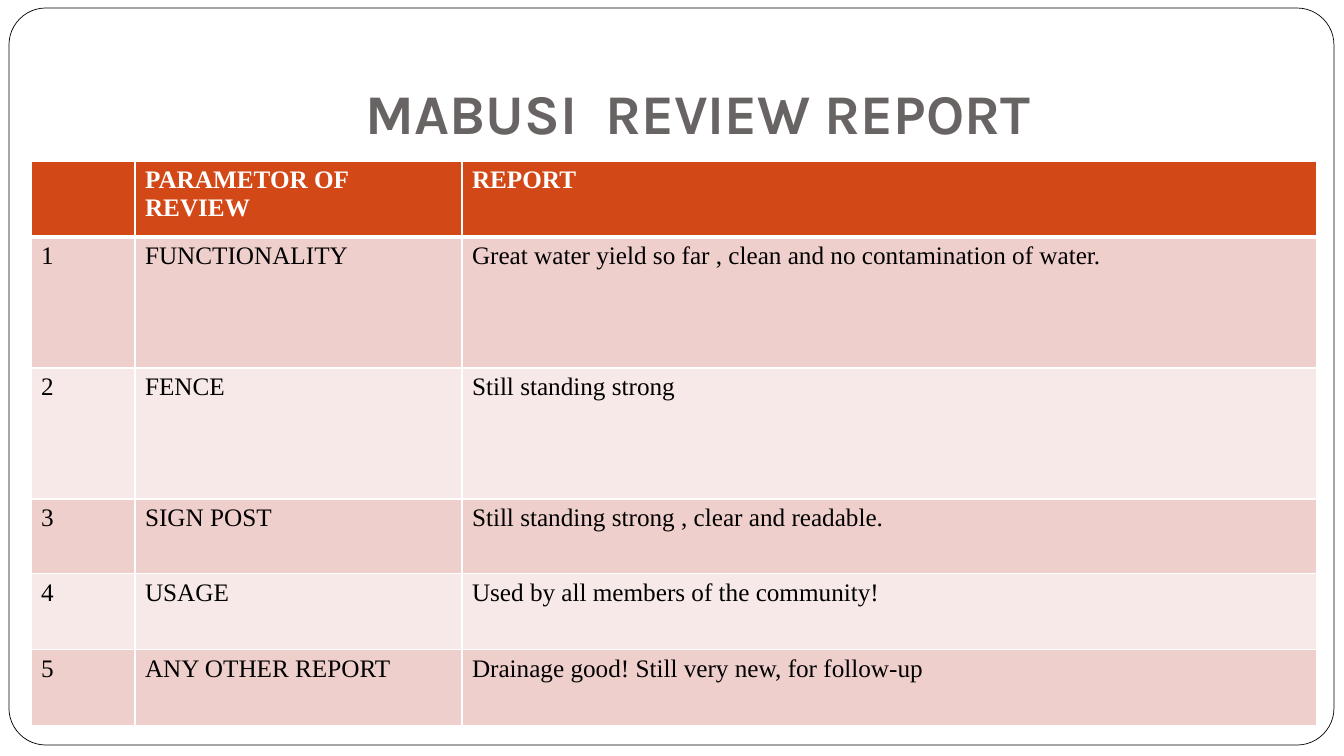
from lxml.etree import SubElement
from pptx import Presentation
from pptx.dml.color import RGBColor
from pptx.enum.shapes import MSO_SHAPE as Shape
from pptx.enum.text import MSO_ANCHOR as Anchor, MSO_AUTO_SIZE as AutoSize, PP_ALIGN as Align
from pptx.oxml.ns import qn
from pptx.util import Emu, Pt

COLOURS = {
    "white": "FFFFFF",
    "black": "000000",
    "title": "696464",
    "header": "D34817",
    "odd": "EFCFCC",
    "even": "F7E9E8",
}
COLUMN_WIDTHS = [104, 327, 855]
ROW_HEIGHTS = [76, 131, 131, 75, 76, 76]
REVIEW = [
    ("", "PARAMETOR OF REVIEW", "REPORT"),
    ("1", "FUNCTIONALITY", "Great water yield so far , clean and no contamination of water."),
    ("2", "FENCE", "Still standing strong"),
    ("3", "SIGN POST", "Still standing strong , clear and readable."),
    ("4", "USAGE", "Used by all members of the community!"),
    ("5", "ANY OTHER REPORT", "Drainage good! Still very new, for follow-up"),
]


def px(length):
    return Emu(round(length * 914400 / 100.8))


def colour(name):
    return RGBColor.from_string(COLOURS[name])


class ReportSlide:
    title_font = "Karla"
    body_font = "Times New Roman"

    def __init__(self, presentation):
        self.slide = presentation.slides.add_slide(presentation.slide_layouts[5])

    def add_run(self, paragraph, text, font, size, colour_name, bold):
        run = paragraph.add_run()
        run.text = text
        run.font.name = font
        run.font.size = Pt(size)
        run.font.bold = bold
        run.font.color.rgb = colour(colour_name)

    def add_frame(self, left, top, width, height):
        shape = self.slide.shapes.add_shape(
            Shape.ROUNDED_RECTANGLE, px(left), px(top), px(width), px(height))
        shape.adjustments[0] = 0.05
        shape.shadow.inherit = False
        shape.fill.solid()
        shape.fill.fore_color.rgb = colour("white")
        shape.line.color.rgb = colour("black")
        shape.line.width = Pt(0.5)
        self.slide.shapes.title.element.addprevious(shape.element)

    def add_title(self, text, left, top, width, height):
        title = self.slide.shapes.title
        title.left, title.top = px(left), px(top)
        title.width, title.height = px(width), px(height)
        frame = title.text_frame
        frame.word_wrap = True
        frame.auto_size = AutoSize.NONE
        frame.vertical_anchor = Anchor.BOTTOM
        frame.margin_left = frame.margin_right = frame.margin_bottom = px(10)
        frame.margin_top = px(5)
        paragraph = frame.paragraphs[0]
        paragraph.alignment = Align.CENTER
        self.add_run(paragraph, text, self.title_font, 40, "title", True)

    def add_borders(self, cell, widths):
        properties = cell._tc.get_or_add_tcPr()
        for position, (side, width) in enumerate(widths.items()):
            line = SubElement(properties, qn(f"a:{side}"), w=str(Pt(width)))
            fill = SubElement(line, qn("a:solidFill"))
            SubElement(fill, qn("a:srgbClr"), val=COLOURS["white"])
            properties.insert(position, line)

    def add_table(self, rows, left, top, column_widths, row_heights):
        table = self.slide.shapes.add_table(
            len(rows), len(column_widths), px(left), px(top),
            px(sum(column_widths)), px(sum(row_heights))).table
        for column, width in zip(table.columns, column_widths):
            column.width = px(width)
        for row, height in zip(table.rows, row_heights):
            row.height = px(height)
        for row_number, texts in enumerate(rows):
            header = row_number == 0
            fill_name = "header" if header else "odd" if row_number % 2 else "even"
            borders = {"lnL": 1, "lnR": 1, "lnT": 3 if row_number == 1 else 1,
                       "lnB": 3 if header else 1}
            for column_number, text in enumerate(texts):
                cell = table.cell(row_number, column_number)
                cell.fill.solid()
                cell.fill.fore_color.rgb = colour(fill_name)
                self.add_borders(cell, borders)
                if text:
                    self.add_run(cell.text_frame.paragraphs[0], text, self.body_font,
                                 18, "white" if header else "black", header)


def main():
    presentation = Presentation()
    presentation.slide_width, presentation.slide_height = px(1344), px(756)
    report = ReportSlide(presentation)
    report.add_frame(9, 8, 1325, 737)
    report.add_title("MABUSI  REVIEW REPORT ", 134, 30, 1142, 126)
    report.add_table(REVIEW, 31, 161, COLUMN_WIDTHS, ROW_HEIGHTS)
    presentation.save("out.pptx")


if __name__ == "__main__":
    main()
